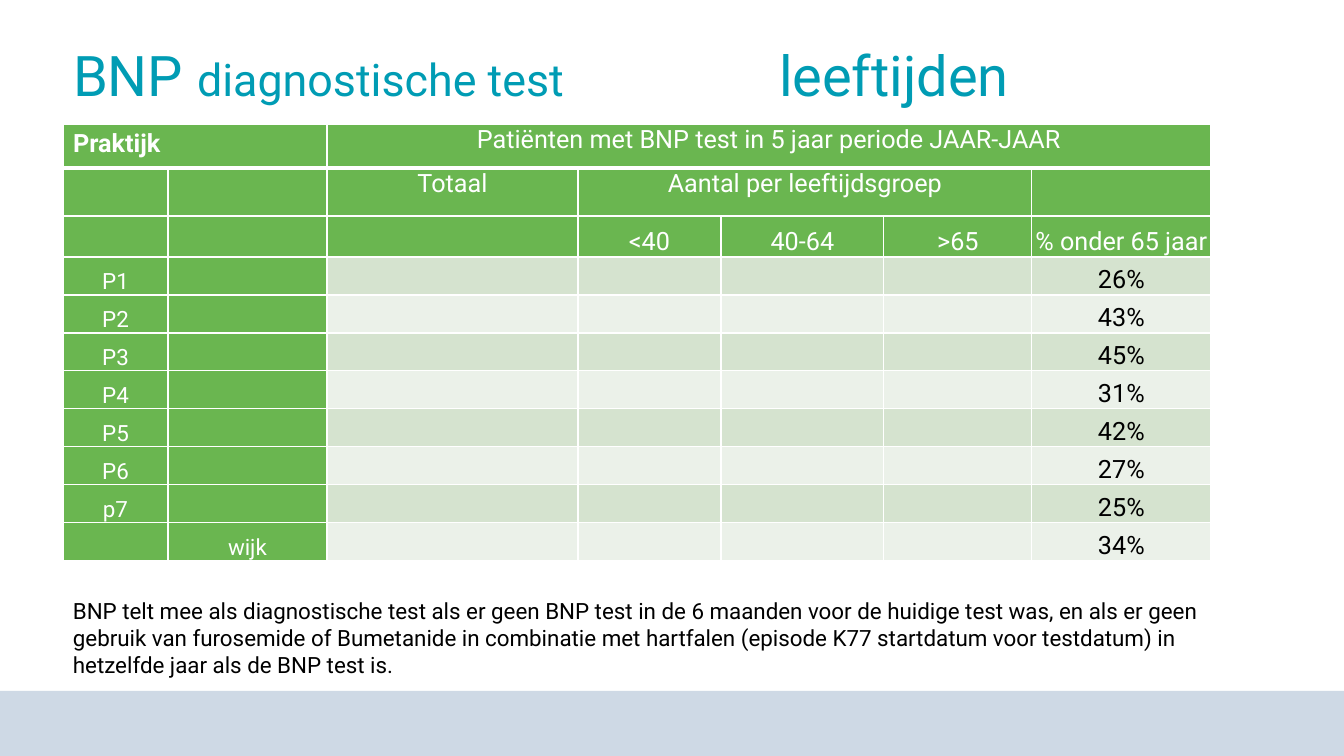
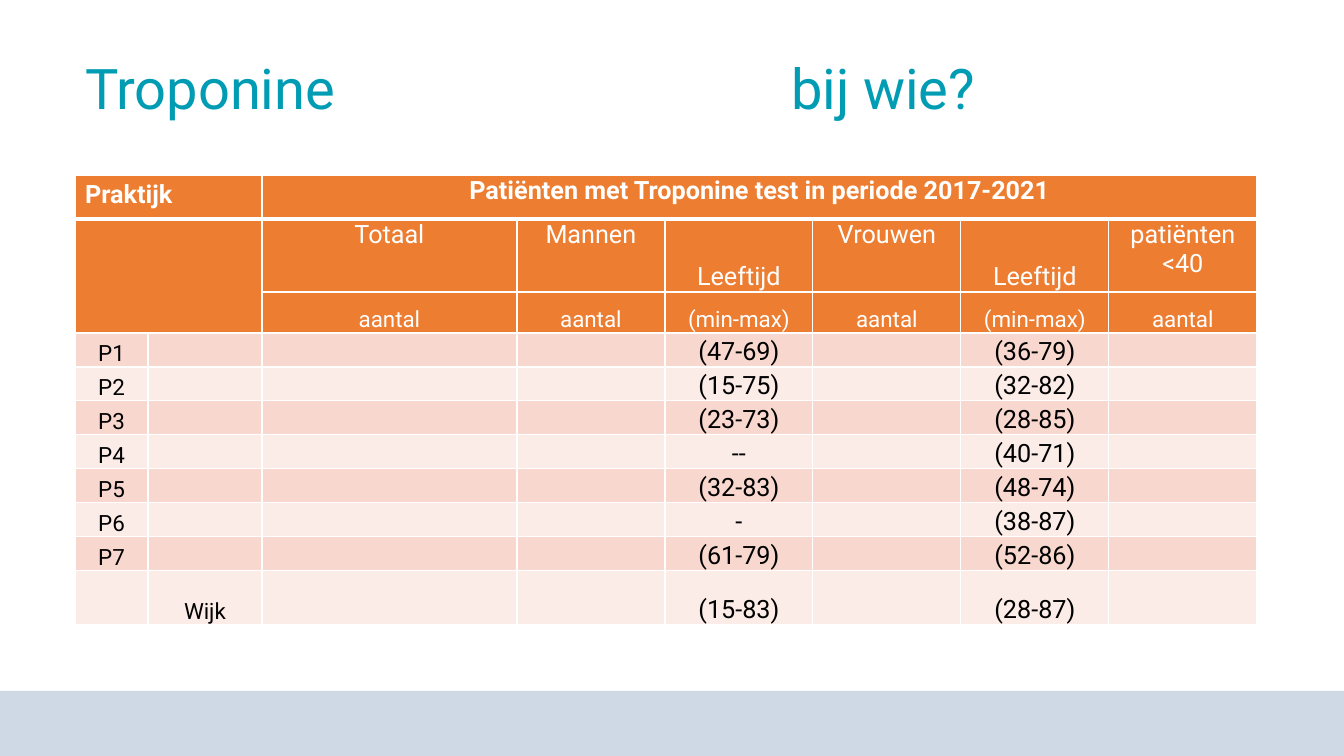
"""Build two slides with tables on BNP and troponin tests per practice."""
import lxml.etree
import pptx
import pptx.dml.color
import pptx.enum.shapes
import pptx.enum.text
import pptx.oxml.ns
import pptx.util

RGB = pptx.dml.color.RGBColor
ANCHOR = pptx.enum.text.MSO_ANCHOR
ALIGN = pptx.enum.text.PP_ALIGN

TEAL = RGB(0x00, 0x9C, 0xB4)
BAND = RGB(0xCE, 0xD9, 0xE5)
WHITE = RGB(0xFF, 0xFF, 0xFF)
BLACK = RGB(0x00, 0x00, 0x00)
GREEN = RGB(0x6A, 0xB6, 0x50)
GREEN_BANDS = (RGB(0xD5, 0xE3, 0xCF), RGB(0xEB, 0xF1, 0xE9))
ORANGE = RGB(0xED, 0x7D, 0x31)
ORANGE_BANDS = (RGB(0xF8, 0xD7, 0xCE), RGB(0xFC, 0xEC, 0xE8))
FONT = "Roboto"

PX_PER_INCH = 100.8
SLIDE_SIZE = (1344, 756)
BAND_TOP = 691
TITLE_TAB = 706
HEADER_ROWS = 3
LABEL_COLUMNS = 2

BNP_SHARES = [("P1", "26%"), ("P2", "43%"), ("P3", "45%"), ("P4", "31%"),
              ("P5", "42%"), ("P6", "27%"), ("p7", "25%")]
TROPONIN_AGES = [("P1", "(47-69)", "(36-79)"), ("P2", "(15-75)", "(32-82)"),
                 ("P3", "(23-73)", "(28-85)"), ("P4", "--", "(40-71)"),
                 ("P5", "(32-83)", "(48-74)"), ("P6", "-", "(38-87)"),
                 ("P7", "(61-79)", "(52-86)")]

SLIDES = [
    {
        "title": [("BNP ", 40), ("diagnostische test", 32), ("\tleeftijden", 40)],
        "title_box": (63, 35, 1250, 78),
        "table_at": (63, 124),
        "columns": [105, 159, 251, 143, 163, 148, 179],
        "rows": [44, 48, 41] + [38] * 8,
        "cells": [
            ["Praktijk", "", "Patiënten met BNP test in 5 jaar periode JAAR-JAAR", "", "", "", ""],
            ["", "", "Totaal", "Aantal per leeftijdsgroep", "", "", ""],
            ["", "", "", "<40", "40-64", ">65", "% onder 65 jaar"],
            *[[name, "", "", "", "", "", share] for name, share in BNP_SHARES],
            ["", "wijk", "", "", "", "", "34%"],
        ],
        "merges": [(0, 0, 0, 1), (0, 2, 0, 6), (1, 3, 1, 5)],
        "header_fill": GREEN,
        "label_fill": GREEN,
        "label_color": WHITE,
        "bands": GREEN_BANDS,
        "bold_heading": False,
        "units_size": 18,
        "note": "BNP telt mee als diagnostische test als er geen BNP test in de 6 maanden "
                "voor de huidige test was, en als er geen gebruik van furosemide of Bumetanide "
                "in combinatie met hartfalen (episode K77 startdatum voor testdatum) in "
                "hetzelfde jaar als de BNP test is.",
        "note_box": (63, 592, 1198, 92),
    },
    {
        "title": [("Troponine\tbij wie?", 40)],
        "title_box": (75, 48, 1202, 112),
        "table_at": (75, 175),
        "columns": [73, 114, 255] + [148] * 5,
        "rows": [44, 73, 41] + [34] * 7 + [54],
        "cells": [
            ["Praktijk", "", "Patiënten met Troponine test in periode 2017-2021", "", "", "", "", ""],
            ["", "", "Totaal", "Mannen", "Leeftijd", "Vrouwen", "Leeftijd", "patiënten <40"],
            ["", "", "aantal", "aantal", "(min-max)", "aantal", "(min-max)", "aantal"],
            *[[name, "", "", "", men, "", women, ""] for name, men, women in TROPONIN_AGES],
            ["", "Wijk", "", "", "(15-83)", "", "(28-87)", ""],
        ],
        "merges": [(0, 0, 0, 1), (0, 2, 0, 7), (1, 0, 2, 1)],
        "header_fill": ORANGE,
        "label_fill": None,
        "label_color": BLACK,
        "bands": ORANGE_BANDS,
        "bold_heading": True,
        "units_size": 16,
    },
]


def px(length):
    return pptx.util.Emu(round(length * 914400 / PX_PER_INCH))


def box(lengths):
    return [px(length) for length in lengths]


def style(run, size, color, bold=False):
    run.font.name = FONT
    run.font.size = pptx.util.Pt(size)
    run.font.color.rgb = color
    run.font.bold = bold


def add_band_to_master(prs, slide):
    width, height = SLIDE_SIZE
    band = slide.shapes.add_shape(pptx.enum.shapes.MSO_SHAPE.RECTANGLE,
                                  *box((0, BAND_TOP, width, height - BAND_TOP)))
    band.shadow.inherit = False
    band.fill.solid()
    band.fill.fore_color.rgb = BAND
    band.line.fill.background()
    band.element.xpath("./p:nvSpPr/p:cNvPr")[0].set("id", "99")
    prs.slide_master.shapes.element.insert(2, band.element)


def write_title(slide, content):
    title = slide.shapes.title
    title.left, title.top, title.width, title.height = box(content["title_box"])
    frame = title.text_frame
    frame.auto_size = pptx.enum.text.MSO_AUTO_SIZE.NONE
    frame.vertical_anchor = ANCHOR.TOP
    paragraph = frame.paragraphs[0]
    paragraph.alignment = ALIGN.LEFT
    tabs = lxml.etree.SubElement(paragraph._p.get_or_add_pPr(), pptx.oxml.ns.qn("a:tabLst"))
    lxml.etree.SubElement(tabs, pptx.oxml.ns.qn("a:tab"), pos=str(px(TITLE_TAB)), algn="l")
    for text, size in content["title"]:
        run = paragraph.add_run()
        run.text = text
        style(run, size, TEAL)


def set_borders(cell, row):
    widths = {"lnL": 1, "lnR": 1, "lnT": 3 if row == 1 else 1, "lnB": 3 if row == 0 else 1}
    properties = cell._tc.get_or_add_tcPr()
    for position, (side, width) in enumerate(widths.items()):
        line = lxml.etree.Element(pptx.oxml.ns.qn("a:" + side), w=str(pptx.util.Pt(width)))
        fill = lxml.etree.SubElement(line, pptx.oxml.ns.qn("a:solidFill"))
        lxml.etree.SubElement(fill, pptx.oxml.ns.qn("a:srgbClr"), val=str(WHITE))
        properties.insert(position, line)


def format_cell(cell, row, column, text, content):
    is_header = row < HEADER_ROWS
    is_label = not is_header and column < LABEL_COLUMNS
    is_corner = row == column == 0
    fill = content["bands"][(row - HEADER_ROWS) % 2]
    if is_header:
        fill = content["header_fill"]
    elif is_label and content["label_fill"]:
        fill = content["label_fill"]
    cell.fill.solid()
    cell.fill.fore_color.rgb = fill
    set_borders(cell, row)
    if not is_corner:
        cell.margin_left = cell.margin_top = cell.margin_right = px(1)
        cell.margin_bottom = 0
    at_bottom = row >= HEADER_ROWS - 1 or text == "Leeftijd"
    cell.vertical_anchor = ANCHOR.BOTTOM if at_bottom else ANCHOR.TOP
    if not text:
        return
    cell.text_frame.text = text
    paragraph = cell.text_frame.paragraphs[0]
    paragraph.alignment = ALIGN.LEFT if is_corner else ALIGN.CENTER
    size, color = 18, WHITE if is_header else BLACK
    if is_label:
        size, color = 16, content["label_color"]
    elif row == HEADER_ROWS - 1:
        size = content["units_size"]
    bold = is_corner or (row == 0 and content["bold_heading"])
    style(paragraph.runs[0], size, color, bold)


def add_practice_table(slide, content):
    columns, rows = content["columns"], content["rows"]
    table = slide.shapes.add_table(len(rows), len(columns), *box(
        (*content["table_at"], sum(columns), sum(rows)))).table
    table.first_row = table.horz_banding = False
    for column, width in zip(table.columns, columns):
        column.width = px(width)
    for row, height in zip(table.rows, rows):
        row.height = px(height)
    for row, texts in enumerate(content["cells"]):
        for column, text in enumerate(texts):
            format_cell(table.cell(row, column), row, column, text, content)
    for top, left, bottom, right in content["merges"]:
        table.cell(top, left).merge(table.cell(bottom, right))


def add_note(slide, content):
    frame = slide.shapes.add_textbox(*box(content["note_box"])).text_frame
    frame.word_wrap = True
    frame.text = content["note"]
    style(frame.paragraphs[0].runs[0], 16, BLACK)


def main():
    prs = pptx.Presentation()
    prs.slide_width, prs.slide_height = box(SLIDE_SIZE)
    for number, content in enumerate(SLIDES):
        slide = prs.slides.add_slide(prs.slide_layouts[5])
        if number == 0:
            add_band_to_master(prs, slide)
        add_practice_table(slide, content)
        write_title(slide, content)
        if "note" in content:
            add_note(slide, content)
    prs.save("out.pptx")


if __name__ == "__main__":
    main()
